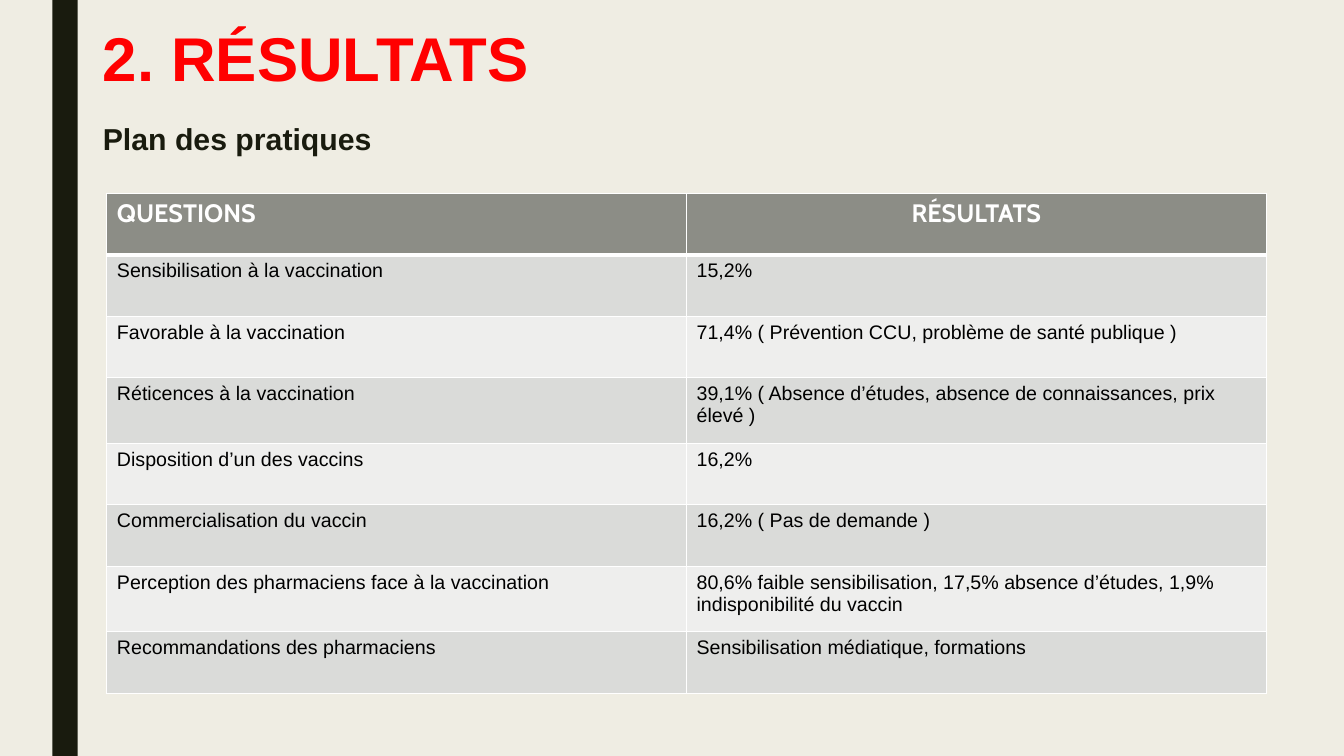
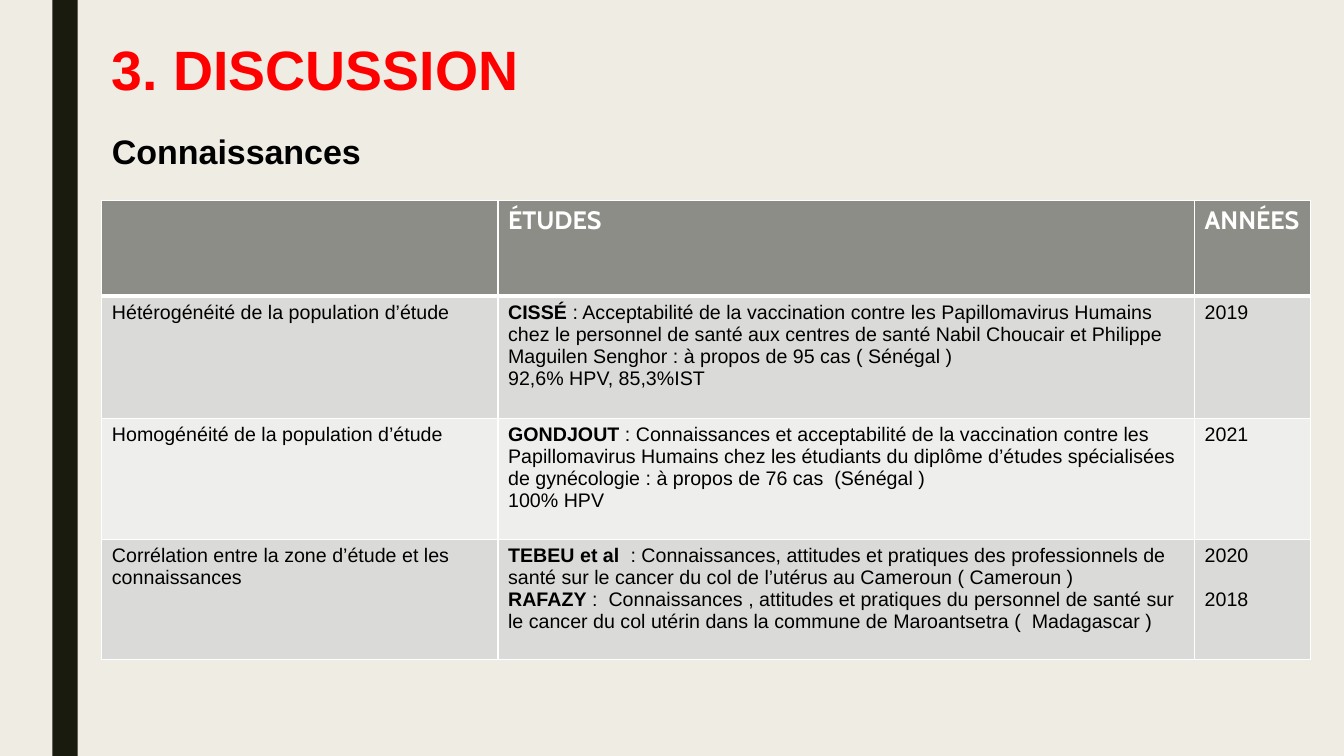
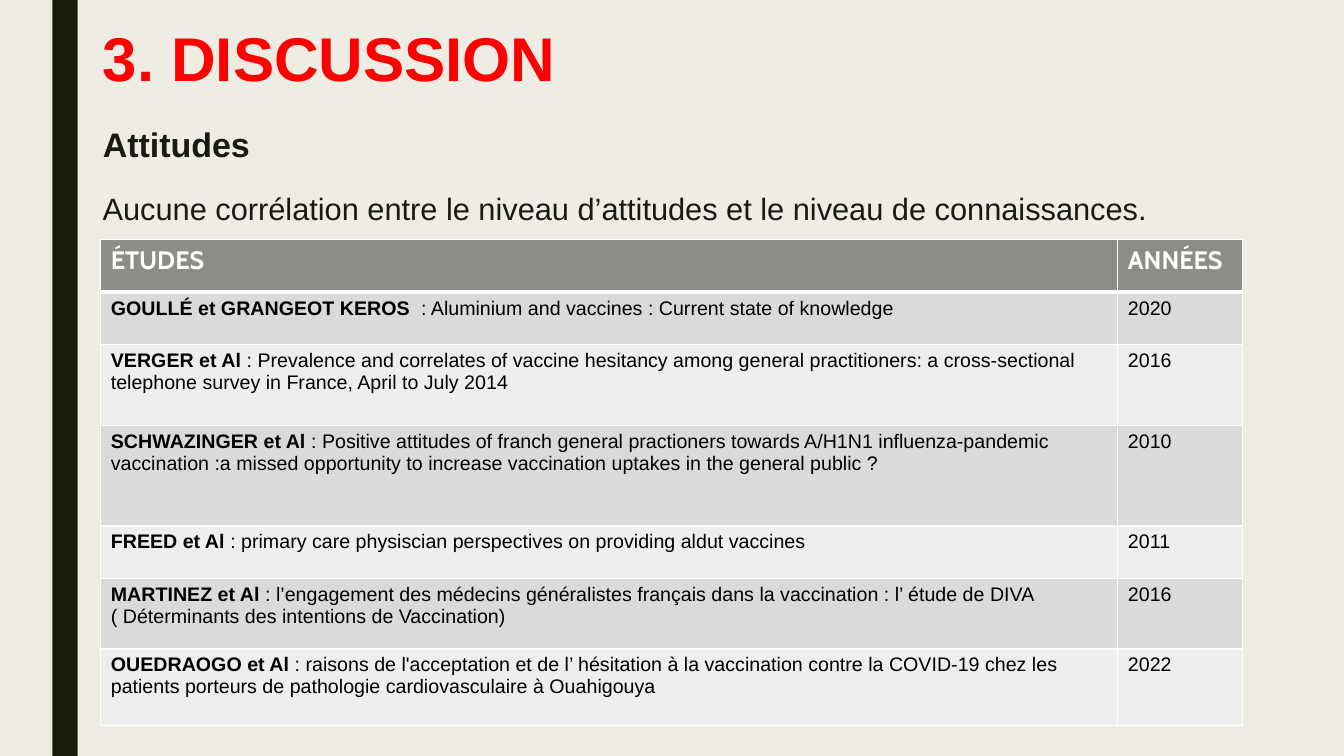
from lxml import etree
from pptx import Presentation
from pptx.dml.color import RGBColor
from pptx.enum.shapes import MSO_SHAPE
from pptx.enum.text import MSO_ANCHOR, MSO_AUTO_SIZE, PP_ALIGN
from pptx.oxml.ns import qn
from pptx.util import Inches, Pt

RECTANGLE = MSO_SHAPE.RECTANGLE
TOP = MSO_ANCHOR.TOP
NO_AUTOFIT = MSO_AUTO_SIZE.NONE
LEFT = PP_ALIGN.LEFT
CENTER = PP_ALIGN.CENTER

CREAM = RGBColor(0xEF, 0xED, 0xE3)
DARK = RGBColor(0x19, 0x1B, 0x0E)
RED = RGBColor(0xFF, 0x00, 0x00)
BLACK = RGBColor(0x00, 0x00, 0x00)
WHITE = RGBColor(0xFF, 0xFF, 0xFF)
HEADER_GREY = RGBColor(0x8C, 0x8D, 0x86)
ROW_GREYS = (RGBColor(0xEE, 0xEE, 0xED), RGBColor(0xDA, 0xDB, 0xD9))

BODY_FONT = "Arial"
HEADER_FONT = "Cabin"
THIN, THICK = 1, 3


class Deck:
    """Holds the style and the current slide; lengths are percentages of the slide's size."""

    def __init__(self):
        self.presentation = Presentation()
        self.presentation.slide_width = Inches(13.33)
        self.presentation.slide_height = Inches(7.5)
        self.master = self.presentation.slide_master
        self.master.background.fill.solid()
        self.master.background.fill.fore_color.rgb = CREAM
        self.layout = self.presentation.slide_layouts.get_by_name("Title Only")
        self.slide = None

    def x(self, percent):
        return round(self.presentation.slide_width * percent / 100)

    def y(self, percent):
        return round(self.presentation.slide_height * percent / 100)

    def box(self, left, top, width, height):
        return self.x(left), self.y(top), self.x(width), self.y(height)

    def add_slide(self):
        self.slide = self.presentation.slides.add_slide(self.layout)

    def move_band_to_master(self):
        """Draw the side band on the current slide, then hand it to the master for all slides."""
        band = self.slide.shapes.add_shape(RECTANGLE, *self.box(3.9, 0, 1.88, 100))
        band.shadow.inherit = False
        band.fill.solid()
        band.fill.fore_color.rgb = DARK
        band.line.fill.background()
        self.master.shapes.element.insert(2, band.element)

    def add_run(self, paragraph, text, size, color, bold=False, font=BODY_FONT):
        run = paragraph.add_run()
        run.text = text
        run.font.size = Pt(size)
        run.font.name = font
        run.font.bold = bold
        run.font.color.rgb = color

    def add_title(self, title, subtitle, box, title_size, subtitle_size, subtitle_color=DARK):
        shape = self.slide.shapes.title
        shape.left, shape.top, shape.width, shape.height = self.box(*box)
        frame = shape.text_frame
        frame.auto_size = NO_AUTOFIT
        frame.vertical_anchor = TOP
        frame.word_wrap = True
        heading = frame.paragraphs[0]
        subheading = frame.add_paragraph()
        subheading.space_before = Pt(round(0.85 * subtitle_size, 1))
        heading.alignment = subheading.alignment = LEFT
        self.add_run(heading, title, title_size, RED, bold=True)
        self.add_run(subheading, subtitle, subtitle_size, subtitle_color, bold=True)

    def add_text(self, text, box, size):
        frame = self.slide.shapes.add_textbox(*self.box(*box)).text_frame
        frame.word_wrap = True
        self.add_run(frame.paragraphs[0], text, size, DARK)

    def add_table(self, left, top, columns, heights, rows):
        """Rows hold cells; a cell is a text or a list of texts and (bold, plain) pairs."""
        box = self.box(left, top, sum(columns), sum(heights))
        table = self.slide.shapes.add_table(len(rows), len(columns), *box).table
        for column, width in zip(table.columns, columns):
            column.width = self.x(width)
        for row, height in zip(table.rows, heights):
            row.height = self.y(height)
        for row_index, row in enumerate(rows):
            for column_index, content in enumerate(row):
                self.fill_cell(table.cell(row_index, column_index), content, row_index)
        return table

    def fill_cell(self, cell, content, row_index):
        is_header = row_index == 0
        cell.fill.solid()
        cell.fill.fore_color.rgb = HEADER_GREY if is_header else ROW_GREYS[row_index % 2]
        self.add_borders(cell, top=THICK if row_index == 1 else THIN,
                         bottom=THICK if is_header else THIN)
        texts = [content] if isinstance(content, str) else content
        for index, text in enumerate(texts):
            frame = cell.text_frame
            paragraph = frame.add_paragraph() if index else frame.paragraphs[0]
            if is_header:
                self.add_run(paragraph, text, 18, WHITE, bold=True, font=HEADER_FONT)
                continue
            author, plain = ("", text) if isinstance(text, str) else text
            if author:
                self.add_run(paragraph, author, 14, BLACK, bold=True)
            self.add_run(paragraph, plain, 14, BLACK)

    def add_borders(self, cell, top, bottom):
        properties = cell._tc.get_or_add_tcPr()
        sides = (("a:lnL", THIN), ("a:lnR", THIN), ("a:lnT", top), ("a:lnB", bottom))
        for index, (tag, width) in enumerate(sides):
            line = etree.Element(qn(tag), w=str(Pt(width)))
            fill = etree.SubElement(line, qn("a:solidFill"))
            etree.SubElement(fill, qn("a:srgbClr"), val=str(WHITE))
            properties.insert(index, line)


def add_practice_results(deck):
    deck.add_slide()
    deck.add_title("2. RÉSULTATS", "Plan des pratiques", (6.9, 2, 86.25, 14.5), 44.1, 21.6)
    single, double = 8.13, 8.67
    table = deck.add_table(
        7.95, 25.6, [43.13] * 2,
        [single, single, single, double, single, single, double, single],
        [
            ("QUESTIONS", "RÉSULTATS"),
            ("Sensibilisation à la vaccination", "15,2%"),
            ("Favorable à la vaccination",
             "71,4% ( Prévention CCU, problème de santé publique )"),
            ("Réticences à la vaccination",
             "39,1% ( Absence d’études, absence de connaissances, prix élevé )"),
            ("Disposition d’un des vaccins", "16,2%"),
            ("Commercialisation du vaccin", "16,2% ( Pas de demande )"),
            ("Perception des pharmaciens face à la vaccination",
             "80,6% faible sensibilisation, 17,5% absence d’études, "
             "1,9% indisponibilité du vaccin"),
            ("Recommandations des pharmaciens", "Sensibilisation médiatique, formations"),
        ])
    table.cell(0, 1).text_frame.paragraphs[0].alignment = CENTER


def add_knowledge_discussion(deck):
    deck.add_slide()
    deck.add_title("3. DISCUSSION", "Connaissances", (7.58, 4, 82.45, 19.2), 39.6, 24.3, BLACK)
    table = deck.add_table(
        7.58, 26.53, [29.48, 51.83, 8.63], [12.67, 16.13, 16, 15.87],
        [
            ([], "ÉTUDES", "ANNÉES"),
            ("Hétérogénéité de la population d’étude",
             [("CISSÉ", " : Acceptabilité de la vaccination contre les Papillomavirus Humains "
               "chez le personnel de santé aux centres de santé Nabil Choucair et Philippe "
               "Maguilen Senghor : à propos de 95 cas ( Sénégal )"),
              "92,6% HPV, 85,3%IST"],
             "2019"),
            ("Homogénéité de la population d’étude",
             [("GONDJOUT", " : Connaissances et acceptabilité de la vaccination contre les "
               "Papillomavirus Humains chez les étudiants du diplôme d’études spécialisées "
               "de gynécologie : à propos de 76 cas  (Sénégal )"),
              "100% HPV"],
             "2021"),
            ("Corrélation entre la zone d’étude et les connaissances",
             [("TEBEU et al  ", ": Connaissances, attitudes et pratiques des professionnels de "
               "santé sur le cancer du col de l’utérus au Cameroun ( Cameroun )"),
              ("RAFAZY", " :  Connaissances , attitudes et pratiques du personnel de santé sur "
               "le cancer du col utérin dans la commune de Maroantsetra (  Madagascar )")],
             ["2020", "2018"]),
        ])
    table.cell(3, 2).text_frame.paragraphs[1].space_before = Pt(16)


def add_attitude_discussion(deck):
    deck.add_slide()
    deck.add_title("3. DISCUSSION", "Attitudes", (6.9, 2, 86.25, 15), 44.1, 24.3)
    deck.add_text(
        "Aucune corrélation entre le niveau d’attitudes et le niveau de connaissances.",
        (6.9, 24.4, 86.25, 6.5), 22)
    deck.add_table(
        7.5, 31.73, [75.68, 9.3], [6.93, 6.93, 10.67, 13.33, 6.93, 9.33, 10.13],
        [
            ("ÉTUDES", "ANNÉES"),
            ([("GOULLÉ et GRANGEOT KEROS  ",
               ": Aluminium and vaccines : Current state of knowledge")], "2020"),
            ([("VERGER et Al ",
               ": Prevalence and correlates of vaccine hesitancy among general practitioners: "
               "a cross-sectional telephone survey in France, April to July 2014")], "2016"),
            ([("SCHWAZINGER et Al ",
               ": Positive attitudes of franch general practioners towards A/H1N1 "
               "influenza-pandemic vaccination :a missed opportunity to increase vaccination "
               "uptakes in the general public ?")], "2010"),
            ([("FREED et Al ",
               ": primary care physiscian perspectives on providing aldut vaccines")], "2011"),
            ([("MARTINEZ et Al ",
               ": l’engagement des médecins généralistes français dans la vaccination : "
               "l’ étude de DIVA ( Déterminants des intentions de Vaccination)")], "2016"),
            ([("OUEDRAOGO et Al ",
               ": raisons de l'acceptation et de l’ hésitation à la vaccination contre la "
               "COVID-19 chez les patients porteurs de pathologie cardiovasculaire "
               "à Ouahigouya")], "2022"),
        ])


def main():
    deck = Deck()
    add_practice_results(deck)
    add_knowledge_discussion(deck)
    add_attitude_discussion(deck)
    deck.move_band_to_master()
    deck.presentation.save("out.pptx")


if __name__ == "__main__":
    main()
